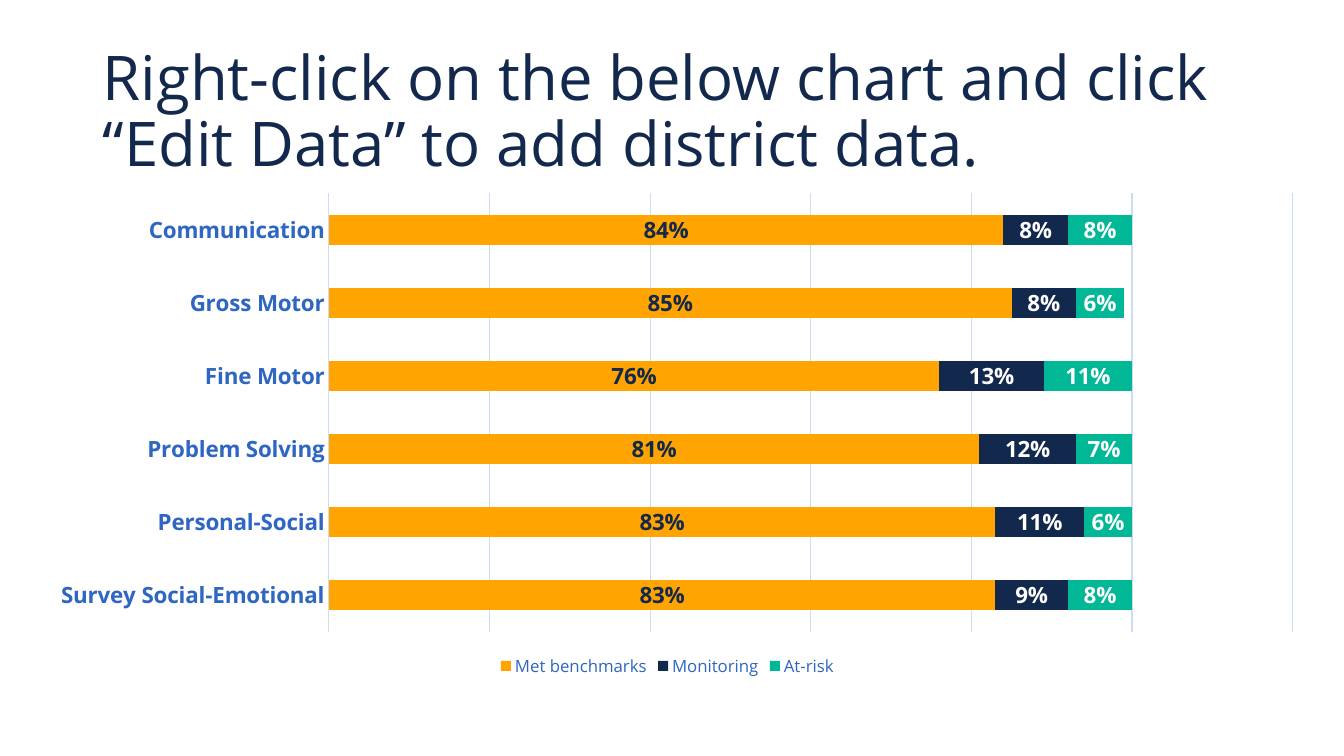
from dataclasses import dataclass

from lxml import etree
from pptx import Presentation
from pptx import util as u
from pptx.chart import data as cd
from pptx.dml.color import RGBColor
from pptx.enum import chart as ce
from pptx.enum import text
from pptx.oxml import ns

FONT = "Open Sans"
NAVY, BLUE, PALE, WHITE = "12284C", "2E66C2", "CDDBF3", "FFFFFF"
DOMAINS = ["Survey Social-Emotional", "Personal-Social", "Problem Solving",
           "Fine Motor", "Gross Motor", "Communication"]


@dataclass
class Outcome:
    name: str
    shares: list[float]
    fill: str
    label: str


OUTCOMES = [
    Outcome("Met benchmarks", [0.83, 0.83, 0.81, 0.76, 0.85, 0.84], "FFA400", NAVY),
    Outcome("Monitoring", [0.09, 0.11, 0.12, 0.13, 0.08, 0.08], NAVY, WHITE),
    Outcome("At-risk", [0.08, 0.06, 0.07, 0.11, 0.06, 0.08], "00B796", WHITE),
]


def rgb(value: str) -> RGBColor:
    return RGBColor.from_string(value)


def set_font(font, size: float, color: str, bold: bool = False) -> None:
    font.name = FONT
    font.size = u.Pt(size)
    font.bold = bold
    font.color.rgb = rgb(color)


def set_line(line, color: str) -> None:
    line.color.rgb = rgb(color)
    line.width = u.Pt(0.75)


def add_title(s, wording: str) -> None:
    sp = s.shapes.title
    sp.left, sp.top, sp.width, sp.height = map(u.Inches, (0.92, 0.4, 11.5, 1.45))
    tf = sp.text_frame
    tf.word_wrap = True
    tf.auto_size = text.MSO_AUTO_SIZE.NONE
    tf.vertical_anchor = text.MSO_ANCHOR.MIDDLE
    p = tf.paragraphs[0]
    p.text = wording
    p.alignment = text.PP_ALIGN.LEFT
    p.line_spacing = 0.9
    set_font(p.font, 44, NAVY)


def place_plot(chart, x: float, y: float, w: float, h: float) -> None:
    area = chart.plots[0]._element.getparent()
    for old in area.findall(ns.qn("c:layout")):
        area.remove(old)
    layout = etree.Element(ns.qn("c:layout"))
    manual = etree.SubElement(layout, ns.qn("c:manualLayout"))
    settings = {"layoutTarget": "inner", "xMode": "edge", "yMode": "edge",
                "x": x, "y": y, "w": w, "h": h}
    for tag, value in settings.items():
        etree.SubElement(manual, ns.qn(f"c:{tag}")).set("val", str(value))
    area.insert(0, layout)


def style_axes(chart) -> None:
    domains = chart.category_axis
    domains.major_tick_mark = domains.minor_tick_mark = ce.XL_TICK_MARK.NONE
    set_font(domains.tick_labels.font, 16, BLUE, True)
    set_line(domains.format.line, PALE)
    shares = chart.value_axis
    shares.minimum_scale, shares.maximum_scale, shares.major_unit = 0, 1.2, 0.2
    shares.has_major_gridlines = True
    set_line(shares.major_gridlines.format.line, PALE)
    shares.tick_labels.number_format = "0%"
    shares.tick_labels.number_format_is_linked = False
    shares.visible = False


def style_series(series, outcome: Outcome) -> None:
    series.format.fill.solid()
    series.format.fill.fore_color.rgb = rgb(outcome.fill)
    series.invert_if_negative = False
    labels = series.data_labels
    labels.show_value = True
    labels.number_format = "0%"
    labels.number_format_is_linked = False
    labels.position = ce.XL_LABEL_POSITION.CENTER
    set_font(labels.font, 16, outcome.label, True)


def add_benchmark_chart(s) -> None:
    data = cd.CategoryChartData(number_format="0%")
    data.categories = DOMAINS
    for outcome in OUTCOMES:
        data.add_series(outcome.name, outcome.shares)
    chart = s.shapes.add_chart(
        ce.XL_CHART_TYPE.BAR_STACKED,
        *map(u.Inches, (0.16, 1.82, 12.92, 4.94)), data).chart
    set_font(chart.font, 10, NAVY)
    chart.has_title = False
    chart.has_legend = True
    chart.legend.position = ce.XL_LEGEND_POSITION.BOTTOM
    chart.legend.include_in_layout = False
    set_font(chart.legend.font, 12, BLUE)
    plot = chart.plots[0]
    plot.gap_width, plot.overlap = 150, 100
    plot.vary_by_categories = False
    style_axes(chart)
    for series, outcome in zip(plot.series, OUTCOMES):
        style_series(series, outcome)
    place_plot(chart, 0.24, 0.02, 0.74, 0.88)


def main() -> None:
    prs = Presentation()
    prs.slide_width, prs.slide_height = u.Inches(13.33), u.Inches(7.5)
    s = prs.slides.add_slide(prs.slide_layouts[5])
    add_title(s, "Right-click on the below chart and click “Edit Data” to add district data.")
    add_benchmark_chart(s)
    prs.save("out.pptx")


if __name__ == "__main__":
    main()
